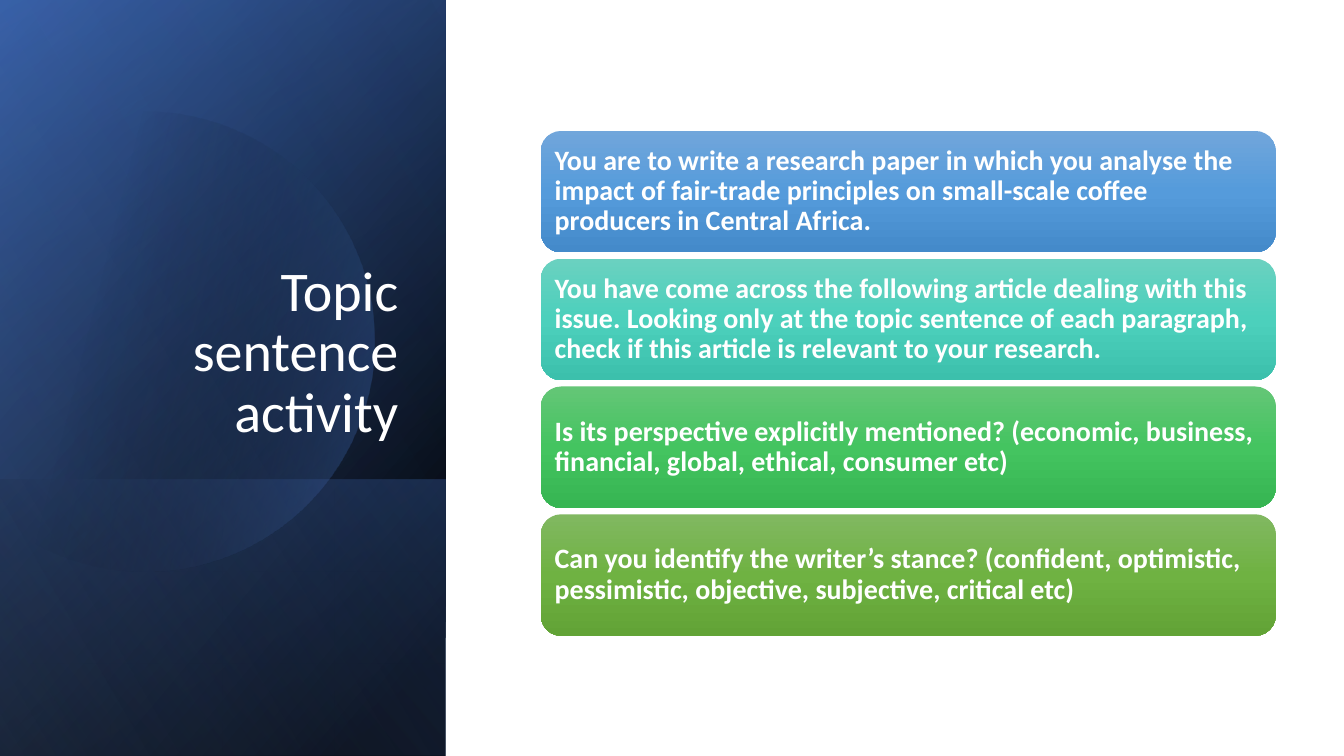
import math
from dataclasses import dataclass

from pptx import Presentation
from pptx import oxml
from pptx.dml.color import RGBColor
from pptx.enum import shapes, text
from pptx.oxml import ns
from pptx.util import Cm, Pt


@dataclass(frozen=True)
class Theme:
    font: str = "Calibri"
    title_size: int = 40
    card_size: int = 20
    line_spacing: float = 0.9
    text_color: str = "FFFFFF"
    base: tuple = ((8, "000000", 100), (100, "2F5597", 100))
    glow: tuple = ((0, "000000", 0), (99, "4472C4", 46))
    footer: tuple = ((2, "4472C4", 29), (100, "000000", 30))
    disc: tuple = ((29, "000000", 0), (100, "4472C4", 43))
    sheen: tuple = ((0, "000000", 0), (99, "8FAADC", 11))
    cards: tuple = (
        ("71A6DB", "559BDB", "448ACA"),
        ("6AD1C0", "4CD0BC", "3CC0AC"),
        ("64C677", "44C460", "36B552"),
        ("81B861", "6FB242", "62A336"),
    )


THEME = Theme()
TITLE = "Topic sentence activity"
TASKS = (
    "You are to write a research paper in which you analyse the impact of fair-trade "
    "principles on small-scale coffee producers in Central Africa.",
    "You have come across the following article dealing with this issue. Looking only at "
    "the topic sentence of each paragraph, check if this article is relevant to your research.",
    "Is its perspective explicitly mentioned? (economic, business, financial, global, "
    "ethical, consumer etc)",
    "Can you identify the writer’s stance? (confident, optimistic, pessimistic, objective, "
    "subjective, critical etc)",
)


def paint_gradient(shape, stops, angle):
    shape.shadow.inherit = False
    shape.line.fill.background()
    shape.fill.background()
    stop_xml = "".join(
        f'<a:gs pos="{position * 1000}"><a:srgbClr val="{color}">'
        f'<a:alpha val="{opacity * 1000}"/></a:srgbClr></a:gs>'
        for position, color, opacity in stops
    )
    gradient = oxml.parse_xml(
        f'<a:gradFill {ns.nsdecls("a")} rotWithShape="1"><a:gsLst>{stop_xml}</a:gsLst>'
        f'<a:lin ang="{angle * 60000}" scaled="0"/></a:gradFill>'
    )
    properties = shape.element.spPr
    properties.replace(properties.find(ns.qn("a:noFill")), gradient)


def format_text(paragraph, size, alignment, bold):
    paragraph.alignment = alignment
    paragraph.line_spacing = THEME.line_spacing
    paragraph.font.name = THEME.font
    paragraph.font.size = Pt(size)
    paragraph.font.bold = bold
    paragraph.font.color.rgb = RGBColor.from_string(THEME.text_color)


def add_turned_panel(slide, left, top, width, height, stops, angle):
    panel = slide.shapes.add_shape(
        shapes.MSO_SHAPE.RECTANGLE,
        Cm(left + (width - height) / 2),
        Cm(top + (height - width) / 2),
        Cm(height),
        Cm(width),
    )
    panel.rotation = 90
    panel.element.spPr.find(ns.qn("a:xfrm")).set("flipH", "1")
    paint_gradient(panel, stops, angle)


def add_cut_disc(slide, left, center_x, center_y, radius):
    cut = math.acos((left - center_x) / radius)
    steps = 120
    angles = [-cut + 2 * cut * step / steps for step in range(steps + 1)]
    points = [
        (Cm(center_x + radius * math.cos(angle)), Cm(center_y + radius * math.sin(angle)))
        for angle in angles
    ]
    builder = slide.shapes.build_freeform(*points[0])
    builder.add_line_segments(points[1:], close=True)
    paint_gradient(builder.convert_to_shape(), THEME.disc, 14)


def add_title_panel(slide, left, top, width, height):
    footer_height = 6.96
    add_turned_panel(slide, left, top, width, height, THEME.base, 50)
    add_turned_panel(slide, left, top, width, height, THEME.glow, 30)
    add_turned_panel(
        slide, left, top + height - footer_height, width, footer_height, THEME.footer, 130
    )
    add_cut_disc(slide, left, left + 3.66, top + 8.61, 5.79)
    add_turned_panel(slide, left, top, width, height, THEME.sheen, 120)

    title = slide.shapes.title
    slide.shapes.element.append(title.element)
    title.left, title.top = Cm(left + 1.63), Cm(top + 4.67)
    title.width, title.height = Cm(8.66), Cm(6.65)
    frame = title.text_frame
    frame.text = TITLE
    frame.word_wrap = True
    frame.auto_size = text.MSO_AUTO_SIZE.NONE
    frame.vertical_anchor = text.MSO_ANCHOR.BOTTOM
    format_text(frame.paragraphs[0], THEME.title_size, text.PP_ALIGN.RIGHT, False)


def add_task_cards(slide, left, top, width, height):
    gap = 0.16
    card_height = (height - gap * (len(TASKS) - 1)) / len(TASKS)
    for index, (task, colors) in enumerate(zip(TASKS, THEME.cards)):
        card = slide.shapes.add_shape(
            shapes.MSO_SHAPE.ROUNDED_RECTANGLE,
            Cm(left),
            Cm(top + index * (card_height + gap)),
            Cm(width),
            Cm(card_height),
        )
        stops = [(position, color, 100) for position, color in zip((0, 50, 100), colors)]
        paint_gradient(card, stops, 90)
        frame = card.text_frame
        frame.text = task
        frame.word_wrap = True
        frame.vertical_anchor = text.MSO_ANCHOR.MIDDLE
        frame.margin_left = frame.margin_right = Cm(0.2)
        frame.margin_top = frame.margin_bottom = Cm(0.2)
        format_text(frame.paragraphs[0], THEME.card_size, text.PP_ALIGN.LEFT, True)


def main():
    presentation = Presentation()
    presentation.slide_width = Cm(33.87)
    presentation.slide_height = Cm(19.05)
    slide = presentation.slides.add_slide(presentation.slide_layouts[5])
    add_title_panel(slide, 0, 0, 11.23, 19.05)
    add_task_cards(slide, 13.63, 3.3, 18.52, 12.72)
    presentation.save("out.pptx")


if __name__ == "__main__":
    main()
